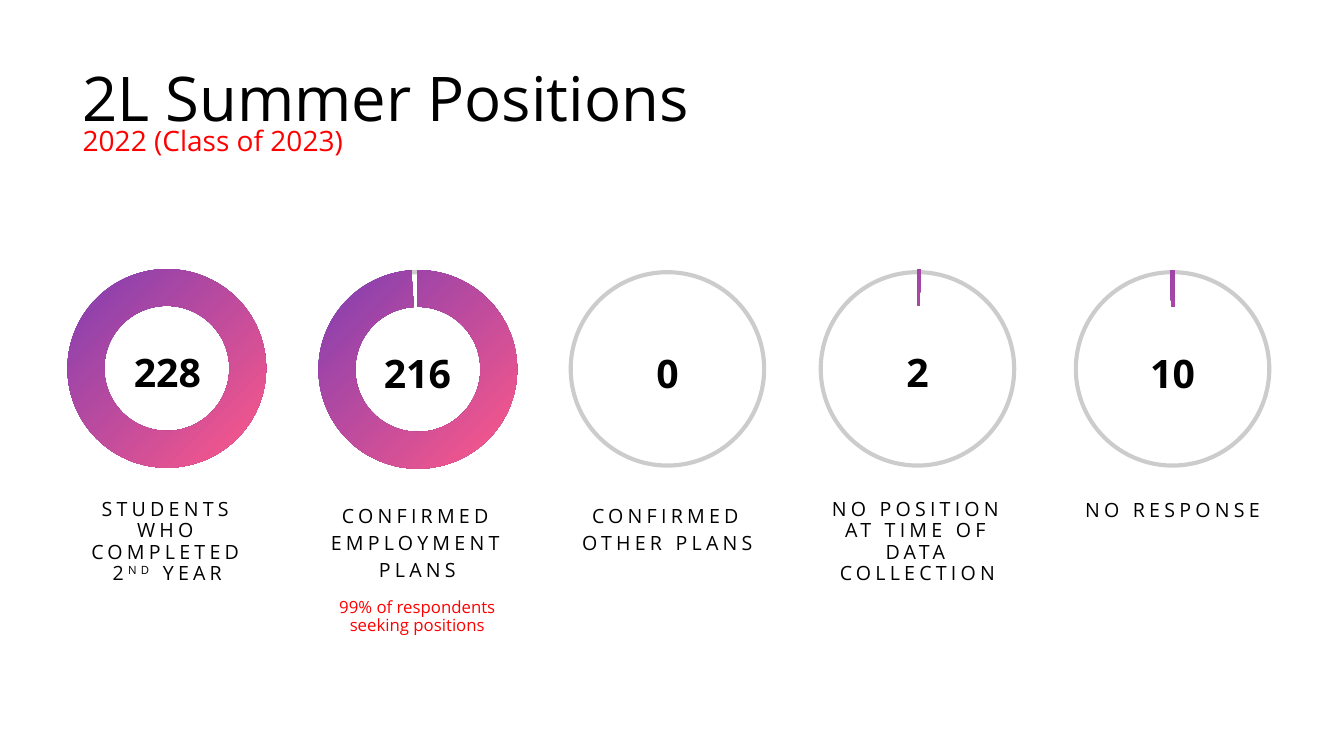
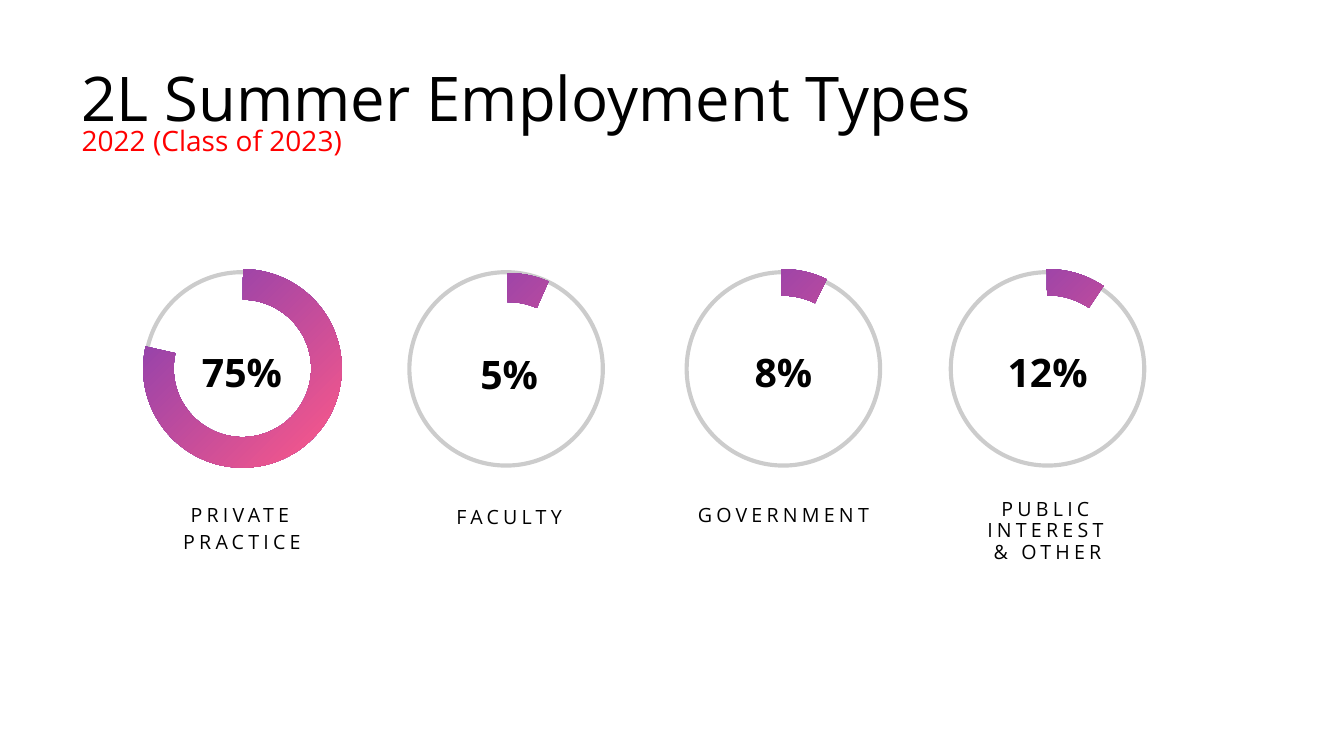
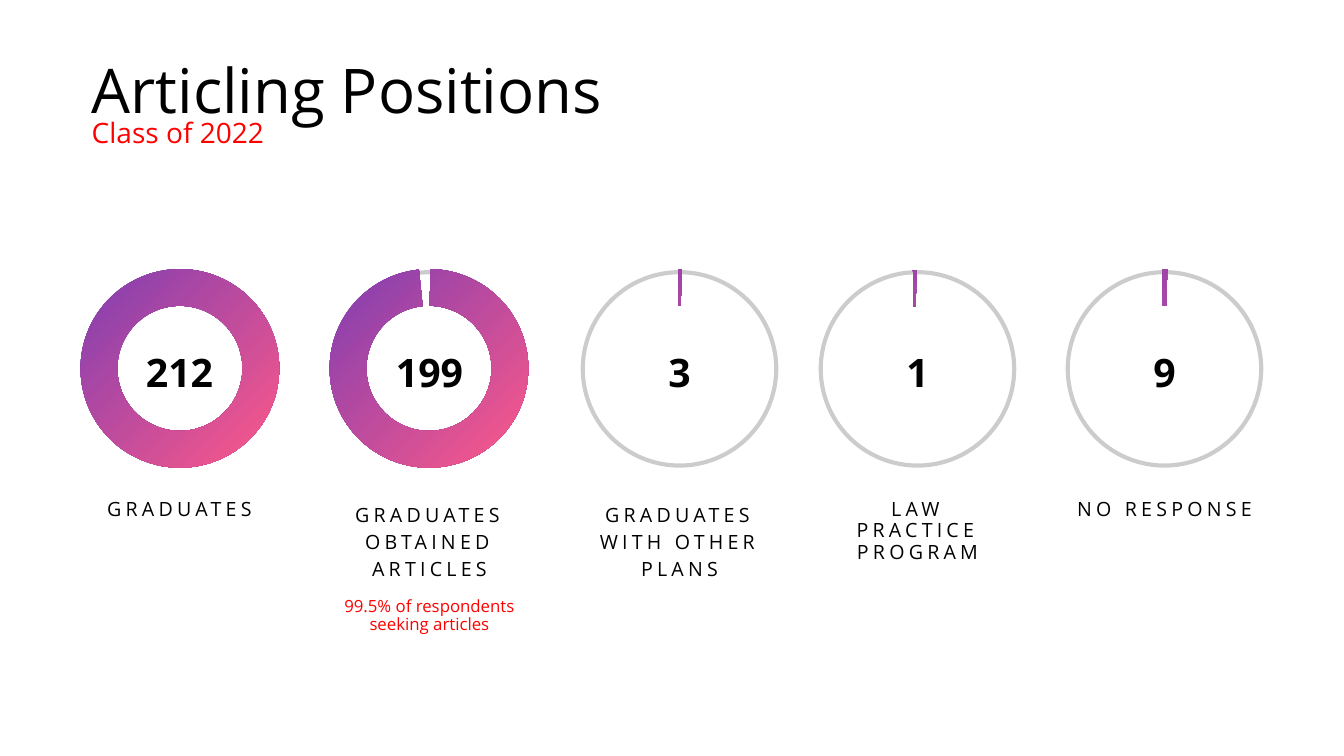
"""Build three slides of ring gauges on summer and articling positions."""
import dataclasses

import lxml.etree
import pptx
import pptx.dml.color
import pptx.enum.shapes
import pptx.enum.text
import pptx.oxml.ns
import pptx.util

Inches = pptx.util.Inches
FONT = "Open Sans"
BLACK, RED = "000000", "FF0000"
GRADIENT = ("7F3EB2", "FF5988")
RING_SIZE, ARC_SIZE = 1.96, 1.97
RING_TOP, VALUE_DROP, LABEL_DROP, NOTE_DROP = 2.68, 0.78, 2.23, 3.2
FULL_CIRCLE = (0.16, 0.07)
TIGHT, LOOSE = 0.9, 1.14


@dataclasses.dataclass
class Gauge:
    """A ring with a value inside, a label below, and an arc in degrees from the top."""
    left: float
    value: str
    label: str
    arc: tuple = ()
    thickness: float = 0.185
    spacing: float = TIGHT
    inset: float = 0.1
    ring_thickness: float = 0.021
    arc_shift: tuple = (-0.01, -0.01)
    text_shift: tuple = (0, 0)
    note: str = ""


SLIDES = [
    ("2L Summer Positions", "2022 (Class of 2023)", (0.72, 0.62), [
        Gauge(0.68, "228", "STUDENTS WHO COMPLETED 2^ND^ YEAR", FULL_CIRCLE, ring_thickness=0),
        Gauge(3.16, "216", "CONFIRMED EMPLOYMENT\vPLANS", (-0.19, -3.81), spacing=LOOSE, inset=0.08,
              arc_shift=(0, 0), text_shift=(0, 0.01), note="99% of respondents seeking positions"),
        Gauge(5.64, "0", "CONFIRMED\vOTHER PLANS", spacing=LOOSE, text_shift=(0, 0.01)),
        Gauge(8.12, "2", "NO POSITION AT TIME OF DATA COLLECTION", (0.22, 2.3)),
        Gauge(10.65, "10", "NO RESPONSE", (-1.71, 1.1), arc_shift=(0, 0), text_shift=(0, 0.01)),
    ]),
    ("2L Summer Employment Types", "2022 (Class of 2023)", (0.71, 0.62), [
        Gauge(1.42, "75%", "PRIVATE PRACTICE", (0.35, -77.22), 0.154, LOOSE, arc_shift=(0, -0.01)),
        Gauge(4.04, "5%", "FACULTY", (-0.89, 23.66), 0.146, LOOSE,
              arc_shift=(0.02, 0.03), text_shift=(0.03, 0.02)),
        Gauge(6.79, "8%", "GOVERNMENT", (-1.02, 26.19), 0.134, LOOSE, inset=0.04),
        Gauge(9.41, "12%", "PUBLIC INTEREST\v& OTHER", (-0.75, 33.94), 0.132, arc_shift=(0, -0.01)),
    ]),
    ("Articling Positions", "Class of 2022", (0.81, 0.54), [
        Gauge(0.8, "212", "GRADUATES", FULL_CIRCLE, ring_thickness=0, arc_shift=(0, -0.01)),
        Gauge(3.28, "199", "GRADUATES OBTAINED\vARTICLES", (0.76, -5.82), spacing=LOOSE,
              note="99.5% of respondents seeking articles"),
        Gauge(5.76, "3", "GRADUATES\vWITH OTHER PLANS", (-0.53, 1.57), 0.183, LOOSE),
        Gauge(8.12, "1", "LAW PRACTICE PROGRAM", (-0.53, 1.57), 0.183, arc_shift=(-0.04, 0)),
        Gauge(10.57, "9", "NO RESPONSE", (-0.99, 1.97)),
    ]),
]


def rgb(value):
    """Return a colour object for a hex string."""
    return pptx.dml.color.RGBColor.from_string(value)


def format_run(run, size, color, bold=False):
    """Set the font of a run."""
    run.font.name = FONT
    run.font.size = pptx.util.Pt(size)
    run.font.bold = bold
    run.font.color.rgb = rgb(color)


def add_title(slide, title, subtitle, position):
    """Fill and place the title placeholder with its red second line."""
    shape = slide.shapes.title
    shape.left, shape.top = (Inches(length) for length in position)
    shape.width, shape.height = Inches(9.42), Inches(0.54)
    frame = shape.text_frame
    frame.auto_size = pptx.enum.text.MSO_AUTO_SIZE.NONE
    frame.vertical_anchor = pptx.enum.text.MSO_ANCHOR.TOP
    frame.margin_top = Inches(0.16)
    paragraph = frame.paragraphs[0]
    paragraph.text = title + "\v" + subtitle
    paragraph.alignment = pptx.enum.text.PP_ALIGN.LEFT
    paragraph.line_spacing = 0.72
    for run, size, color in zip(paragraph.runs, (44, 20), (BLACK, RED)):
        format_run(run, size, color)


def add_text(slide, left, top, height, text, size, color=BLACK, bold=False,
             spacing=TIGHT, inset=0.1, tracking=0):
    """Add a centred text box; text between carets is superscript."""
    box = slide.shapes.add_textbox(Inches(left), Inches(top), Inches(RING_SIZE), Inches(height))
    frame = box.text_frame
    frame.word_wrap = True
    frame.margin_left = frame.margin_right = Inches(inset)
    paragraph = frame.paragraphs[0]
    parts = text.split("^")
    if len(parts) == 1:
        paragraph.text = text
    else:
        for index, part in enumerate(parts):
            run = paragraph.add_run()
            run.text = part
            if index % 2:
                run.font._element.set("baseline", "30000")
    paragraph.alignment = pptx.enum.text.PP_ALIGN.CENTER
    paragraph.line_spacing = spacing
    for run in paragraph.runs:
        format_run(run, size, color, bold)
        if tracking:
            run.font._element.set("spc", str(tracking * 100))


def add_round(slide, kind, left, top, size, adjustments):
    """Add a square preset shape without line or shadow."""
    shape = slide.shapes.add_shape(kind, Inches(left), Inches(top), Inches(size), Inches(size))
    shape.shadow.inherit = False
    shape.line.fill.background()
    for index, value in enumerate(adjustments):
        shape.adjustments[index] = value
    return shape


def add_gauge(slide, gauge):
    """Draw one gauge with its texts."""
    kinds = pptx.enum.shapes.MSO_SHAPE
    ring = add_round(slide, kinds.DONUT, gauge.left, RING_TOP, RING_SIZE, [gauge.ring_thickness])
    ring.fill.solid()
    ring.fill.fore_color.rgb = rgb(BLACK)
    color = ring.fill._xPr.find(".//" + pptx.oxml.ns.qn("a:srgbClr"))
    lxml.etree.SubElement(color, pptx.oxml.ns.qn("a:alpha"), val="20000")
    if gauge.arc:
        angles = [(270 + degrees) % 360 * 0.6 for degrees in gauge.arc]
        shift_x, shift_y = gauge.arc_shift
        arc = add_round(slide, kinds.BLOCK_ARC, gauge.left + shift_x, RING_TOP + shift_y,
                        ARC_SIZE, angles + [gauge.thickness])
        arc.fill.gradient()
        arc.fill.gradient_angle = 315
        for stop, value in zip(arc.fill.gradient_stops, GRADIENT):
            stop.color.rgb = rgb(value)
    left, top = gauge.left + gauge.text_shift[0], RING_TOP + gauge.text_shift[1]
    add_text(slide, left, top + LABEL_DROP, 0.9, gauge.label, 14,
             spacing=gauge.spacing, inset=gauge.inset, tracking=3)
    add_text(slide, left, top + VALUE_DROP, 0.53, gauge.value, 28, bold=True)
    if gauge.note:
        add_text(slide, left, top + NOTE_DROP, 0.47, gauge.note, 12, RED)


def main():
    """Build and save the presentation."""
    presentation = pptx.Presentation()
    presentation.slide_width, presentation.slide_height = Inches(13.33), Inches(7.5)
    for title, subtitle, position, gauges in SLIDES:
        slide = presentation.slides.add_slide(presentation.slide_layouts[5])
        add_title(slide, title, subtitle, position)
        for gauge in gauges:
            add_gauge(slide, gauge)
    presentation.save("out.pptx")


if __name__ == "__main__":
    main()
